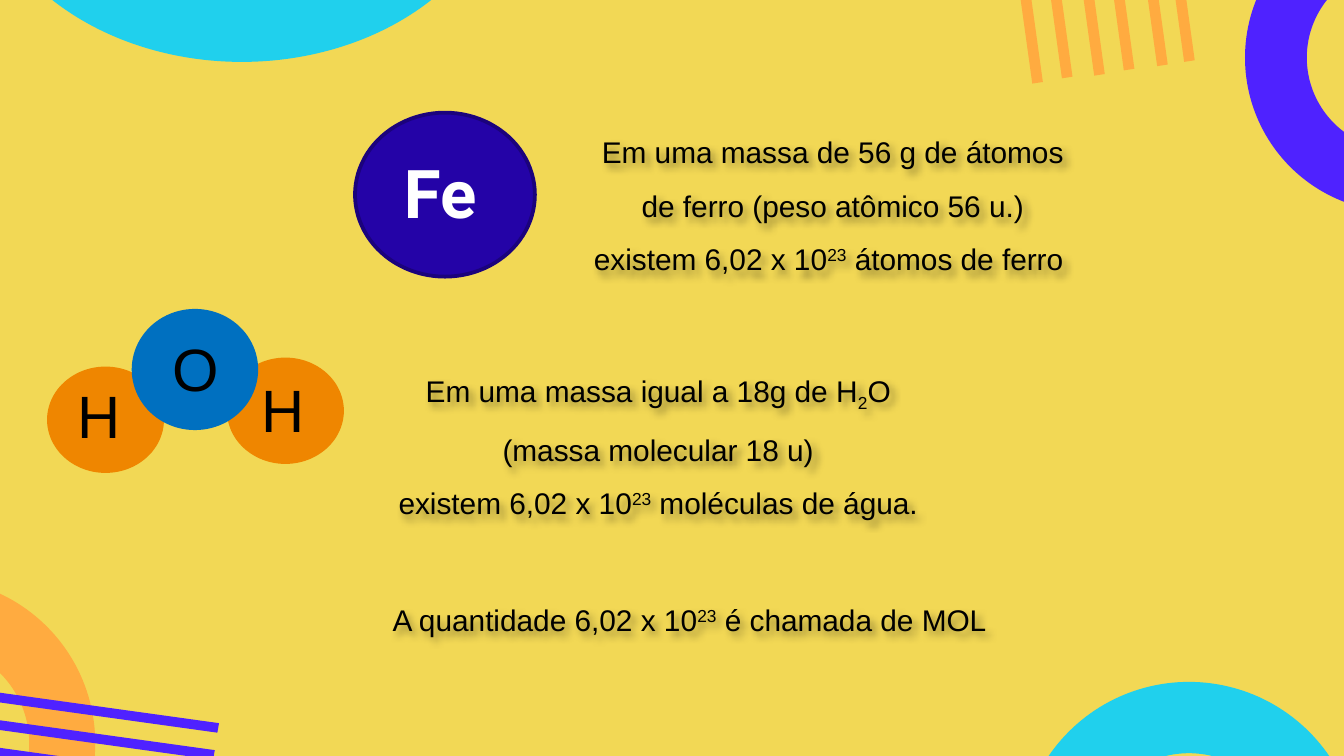
from lxml import etree
from pptx import Presentation
from pptx.dml.color import RGBColor
from pptx.enum import shapes, text
from pptx.oxml import ns
from pptx.util import Cm, Pt

SAND = RGBColor(0xF2, 0xD8, 0x55)
PEACH = RGBColor(0xFF, 0xAB, 0x40)
CYAN = RGBColor(0x20, 0xD0, 0xED)
VIOLET = RGBColor(0x4F, 0x22, 0xFF)
ORANGE = RGBColor(0xEF, 0x86, 0x00)
BLUE = RGBColor(0x00, 0x70, 0xC0)
INDIGO = RGBColor(0x24, 0x03, 0xA7)
NAVY = RGBColor(0x1B, 0x02, 0x7C)
BLACK = RGBColor(0, 0, 0)
WHITE = RGBColor(0xFF, 0xFF, 0xFF)

SHADOW = (
    f'<a:outerShdw {ns.nsdecls("a")} blurRad="50800" dist="38100" dir="2700000">'
    '<a:srgbClr val="000000"><a:alpha val="40000"/></a:srgbClr></a:outerShdw>'
)
BASE = {"^": "30000", "_": "-25000"}

deck = Presentation()
deck.slide_width, deck.slide_height = Cm(25.4), Cm(14.29)
slide = deck.slides.add_slide(deck.slide_layouts[6])
slide.background.fill.solid()
slide.background.fill.fore_color.rgb = SAND


def paint(shape, color):
    shape.shadow.inherit = False
    shape.fill.solid()
    shape.fill.fore_color.rgb = color
    shape.line.fill.background()
    return shape


def write(box, lines, size, font, color, space=1.0):
    """Fill a box; a part that starts with ^ or _ is raised or lowered."""
    frame = box.text_frame
    for i, line in enumerate(lines):
        para = frame.paragraphs[0] if i == 0 else frame.add_paragraph()
        para.alignment = text.PP_ALIGN.CENTER
        para.line_spacing = space
        para.font.size, para.font.name = Pt(size), font
        para.font.color.rgb = color
        for part in line.split("|"):
            run = para.add_run()
            run.text = part.lstrip("^_")
            if part[0] in BASE:
                run._r.get_or_add_rPr().set("baseline", BASE[part[0]])


# Corner disc and rings: centre, radius, band as a share of the width
disc = slide.shapes.add_shape(
    shapes.MSO_SHAPE.OVAL, Cm(-0.51), Cm(-6.88), Cm(10.16), Cm(8.05))
paint(disc, CYAN)
for x, y, r, band, color in [
    (-1.32, 14.05, 3.12, 0.2, PEACH),
    (26.45, 1.09, 2.92, 0.2, VIOLET),
    (22.47, 16.1, 3.21, 0.21, CYAN),
]:
    ring = slide.shapes.add_shape(
        shapes.MSO_SHAPE.DONUT, Cm(x - r), Cm(y - r), Cm(2 * r), Cm(2 * r))
    ring.adjustments[0] = band
    paint(ring, color)

# Slanted stripes: tip, run along the stripe, step across it
tips = [(22.58, 1.14), (22.07, 1.22), (21.44, 1.3),
        (20.88, 1.4), (20.27, 1.45), (19.71, 1.55)]
bars = [(tip, (-0.86, -6.2), (-0.2, 0.03), PEACH) for tip in tips]
bars += [((4.14 - 0.08 * i, 13.67 + 0.51 * i), (-5.54, -0.77), (-0.03, 0.18), VIOLET)
         for i in range(3)]
for (x, y), (dx, dy), (wx, wy), color in bars:
    form = slide.shapes.build_freeform(Cm(x), Cm(y))
    form.add_line_segments([
        (Cm(x + dx), Cm(y + dy)),
        (Cm(x + dx + wx), Cm(y + dy + wy)),
        (Cm(x + wx), Cm(y + wy)),
    ])
    paint(form.convert_to_shape(), color)

# Atoms
for x, y, w, h, color in [
    (0.89, 6.93, 2.21, 2.01, ORANGE),
    (4.29, 6.76, 2.21, 2.01, ORANGE),
    (2.49, 5.84, 2.39, 2.29, BLUE),
    (6.71, 2.13, 3.4, 3.1, INDIGO),
]:
    atom = paint(slide.shapes.add_shape(
        shapes.MSO_SHAPE.OVAL, Cm(x), Cm(y), Cm(w), Cm(h)), color)
atom.line.color.rgb = NAVY
atom.line.width = Pt(2)

# Atom symbols
for sign, x, y, w, h, size, font, color in [
    ("Fe", 7.29, 2.74, 2.06, 1.8, 36, "Roboto", WHITE),
    ("H", 1.19, 7.04, 1.37, 1.63, 32, "Arial", BLACK),
    ("H", 4.67, 6.93, 1.37, 1.63, 32, "Arial", BLACK),
    ("O", 3.02, 6.15, 1.35, 1.63, 32, "Arial", BLACK),
]:
    box = slide.shapes.add_textbox(Cm(x), Cm(y), Cm(w), Cm(h))
    box.text_frame.word_wrap = False
    write(box, [sign], size, font, color)
    box.text_frame.paragraphs[0].font.bold = sign == "Fe"

# Statements with a soft shadow
for x, y, h, lines in [
    (7.39, 2.11, 3.2, ["Em uma massa de 56 g de átomos",
                       "de ferro (peso atômico 56 u.)",
                       "existem 6,02 x 10|^23| átomos de ferro "]),
    (4.09, 6.65, 3.2, ["Em uma massa igual a 18g de H|_2|O",
                       "(massa molecular 18 u)",
                       "existem 6,02 x 10|^23| moléculas de água."]),
    (4.75, 10.95, 1.19, ["A quantidade 6,02 x 10|^23| é chamada de MOL "]),
]:
    box = slide.shapes.add_textbox(Cm(x), Cm(y), Cm(16.7), Cm(h))
    box.text_frame.word_wrap = True
    box.text_frame.vertical_anchor = text.MSO_ANCHOR.MIDDLE
    write(box, lines, 16, "Arial", BLACK, 1.5)
    glow = etree.SubElement(box._element.spPr, ns.qn("a:effectLst"))
    glow.append(etree.fromstring(SHADOW))

deck.save("out.pptx")
